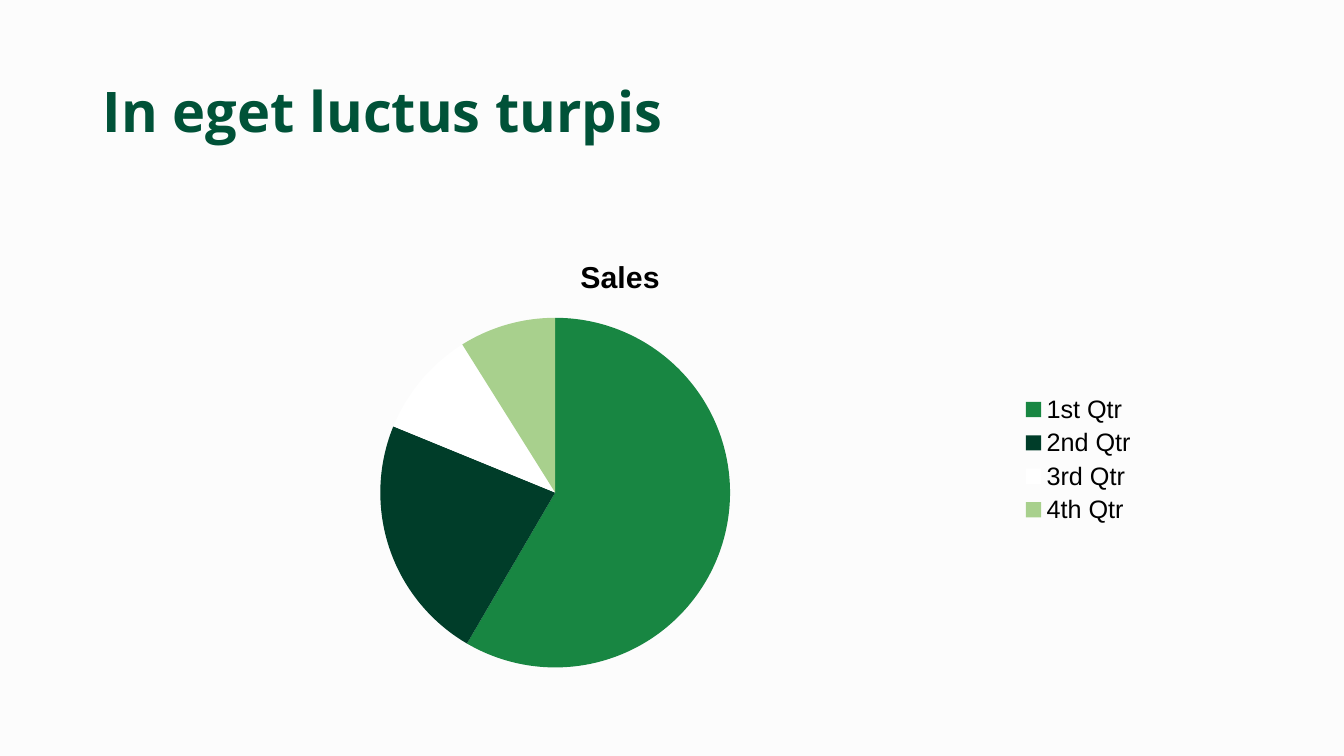
from pptx import Presentation
from pptx.chart.data import CategoryChartData
from pptx.dml.color import RGBColor
from pptx.enum import chart as charts, text
from pptx.util import Inches, Pt

# Content
TITLE = "In eget luctus turpis"
CHART_TITLE = "Sales"
SALES = [  # quarter, value, colour name
    ("1st Qtr", 59, "green"),
    ("2nd Qtr", 23, "dark green"),
    ("3rd Qtr", 10, "white"),
    ("4th Qtr", 9, "light green"),
]
COLORS = {
    "background": "FCFCFC",
    "title": "005238",
    "text": "000000",
    "green": "188642",
    "dark green": "003D29",
    "white": "FFFFFF",
    "light green": "A8D08D",
}
TITLE_BOX = (0.92, 0.78, 9.77, 1.45)
CHART_BOX = (0.92, 2.36, 10.46, 4.4)


def color(name):
    return RGBColor.from_string(COLORS[name])


def format_font(font, *, name, size, color_name, bold=False):
    font.name, font.size, font.bold = name, Pt(size), bold
    font.color.rgb = color(color_name)


def write_text(frame, content, *, line_spacing=None, **font_format):
    frame.text = content
    paragraph = frame.paragraphs[0]
    if line_spacing:
        paragraph.line_spacing = line_spacing
    format_font(paragraph.runs[0].font, **font_format)


# Slide
presentation = Presentation()
presentation.slide_width, presentation.slide_height = Inches(13.33), Inches(7.5)
slide = presentation.slides.add_slide(presentation.slide_layouts[5])
slide.background.fill.solid()
slide.background.fill.fore_color.rgb = color("background")

# Title
title = slide.shapes.title
title.left, title.top, title.width, title.height = map(Inches, TITLE_BOX)
frame = title.text_frame
write_text(frame, TITLE, line_spacing=0.9, name="Open Sans", size=40,
           color_name="title", bold=True)
frame.word_wrap = True
frame.auto_size = text.MSO_AUTO_SIZE.NONE
frame.vertical_anchor = text.MSO_ANCHOR.TOP
frame.paragraphs[0].alignment = text.PP_ALIGN.LEFT

# Sales pie
quarters, values, slice_colors = zip(*SALES)
data = CategoryChartData()
data.categories = quarters
data.add_series(CHART_TITLE, values)
chart = slide.shapes.add_chart(
    charts.XL_CHART_TYPE.PIE, *map(Inches, CHART_BOX), data).chart
format_font(chart.font, name="Arial", size=18, color_name="text")
chart.has_title = True
write_text(chart.chart_title.text_frame, CHART_TITLE, name="Arial", size=21.6,
           color_name="text", bold=True)
chart.chart_title.include_in_layout = False

chart.has_legend = True
chart.legend.position = charts.XL_LEGEND_POSITION.RIGHT
chart.legend.include_in_layout = False

plot = chart.plots[0]
plot.vary_by_categories = True
for index, name in enumerate(slice_colors):
    slice_format = plot.series[0].points[index].format
    slice_format.fill.solid()
    slice_format.fill.fore_color.rgb = color(name)
    slice_format.line.fill.background()

presentation.save("out.pptx")
